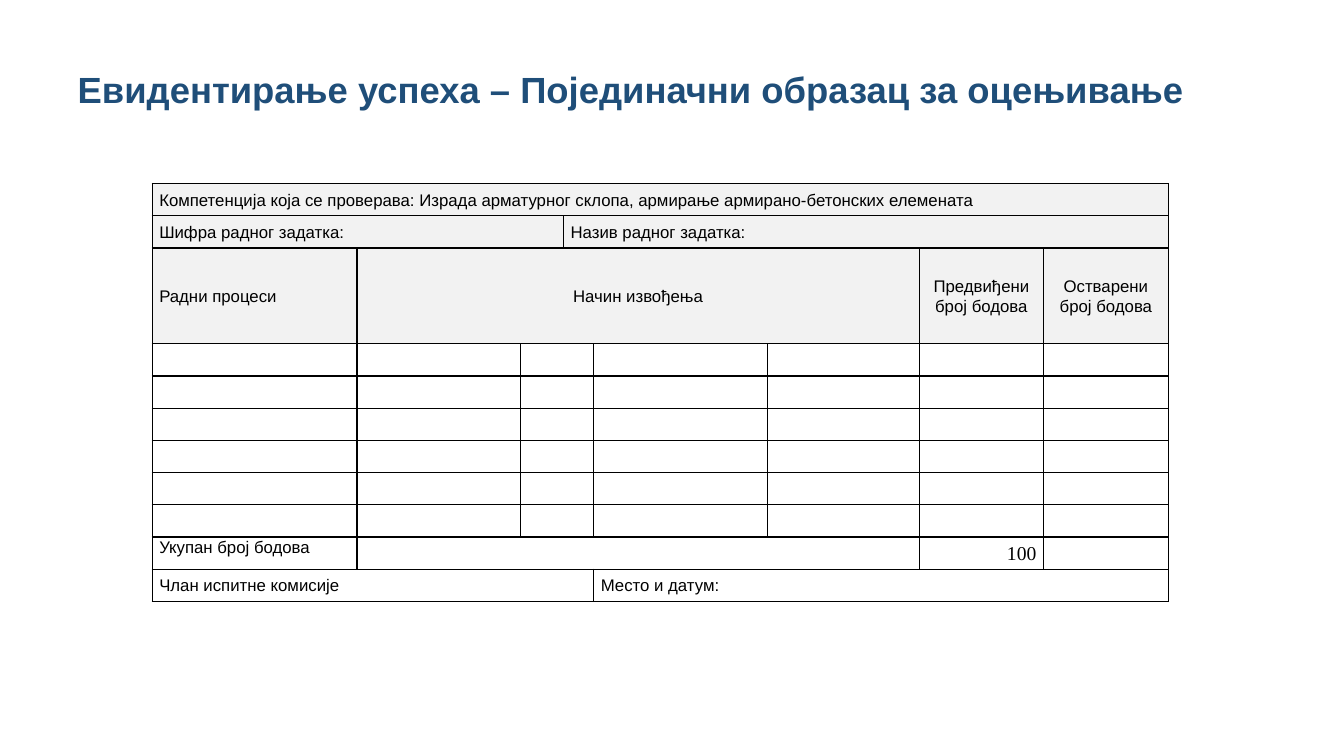
from lxml.etree import SubElement
from pptx import Presentation
from pptx.dml.color import RGBColor
from pptx.enum.text import MSO_ANCHOR as ANC, PP_ALIGN as AL
from pptx.oxml.ns import qn
from pptx.util import Inches, Pt

NAVY = RGBColor(0x1F, 0x4E, 0x79)
BLACK = RGBColor(0, 0, 0)
GREY = RGBColor(0xF2, 0xF2, 0xF2)
WHITE = RGBColor(255, 255, 255)

TITLE = "Евидентирање успеха – Појединачни образац за оцењивање"
COLS = [2.03, 1.62, 0.43, 0.3, 1.72, 1.51, 1.23, 1.24]
ROWS = [0.32] * 2 + [0.95] + [0.32] * 8
BODY = range(3, 9)    # rows left blank for the work processes
HEAD = 3              # number of shaded rows
BOLD = (3, 6)         # rows with a heavy line below
# row, column, columns spanned, text, alignment
CELLS = [
    (0, 0, 8, "Компетенција која се проверава: Израда арматурног склопа, "
              "армирање армирано-бетонских елемената", AL.LEFT),
    (1, 0, 3, "Шифра радног задатка:", AL.LEFT),
    (1, 3, 5, "Назив радног задатка:", AL.LEFT),
    (2, 0, 1, "Радни процеси", AL.LEFT),
    (2, 1, 5, "Начин извођења", AL.CENTER),
    (2, 6, 1, "Предвиђени број бодова", AL.CENTER),
    (2, 7, 1, "Остварени број бодова", AL.CENTER),
    (9, 0, 1, "Укупан број бодова", AL.JUSTIFY),
    (9, 1, 5, "", AL.LEFT),
    (9, 6, 1, "100", AL.RIGHT),
    (10, 0, 4, "Члан испитне комисије", AL.LEFT),
    (10, 4, 4, "Место и датум:", AL.LEFT),
] + [(r, 2, 2, "", AL.LEFT) for r in BODY]


def rule(cell, side, width):
    line = SubElement(cell._tc.get_or_add_tcPr(), qn("a:ln" + side),
                      w=str(Pt(width)))
    fill = SubElement(line, qn("a:solidFill"))
    SubElement(fill, qn("a:srgbClr"), val=str(BLACK))


def style(cell, row, col):
    heavy = {"L": col == 1 and row >= 2 and row < 10,
             "R": col == 0 and row >= 2 and row < 10,
             "T": row - 1 in BOLD, "B": row in BOLD}
    for side, thick in heavy.items():
        rule(cell, side, 1.5 if thick else 1)
    cell.fill.solid()
    cell.fill.fore_color.rgb = GREY if row < HEAD else WHITE
    cell.margin_left = cell.margin_right = Inches(0.07)
    cell.margin_top = cell.margin_bottom = 0
    # Small end mark keeps blank rows low
    SubElement(cell.text_frame.paragraphs[0]._p, qn("a:endParaRPr"), sz="1200")


def paint(run, name, size, color):
    run.font.name, run.font.size = name, Pt(size)
    run.font.color.rgb = color


prs = Presentation()
prs.slide_width, prs.slide_height = Inches(13.33), Inches(7.5)
slide = prs.slides.add_slide(prs.slide_layouts[5])

# Title
title = slide.shapes.title
title.left, title.top = Inches(0.67), Inches(0.35)
title.width, title.height = Inches(11.5), Inches(1.12)
frame = title.text_frame
frame.text = TITLE
frame.vertical_anchor = ANC.MIDDLE
para = frame.paragraphs[0]
para.alignment, para.line_spacing = AL.LEFT, 0.9
paint(para.runs[0], "Arial", 26, NAVY)
para.runs[0].font.bold = True

# Form grid
form = slide.shapes.add_table(len(ROWS), len(COLS), Inches(1.51), Inches(1.82),
                              Inches(sum(COLS)), Inches(sum(ROWS))).table
form.first_row = form.horz_banding = False
for col, width in zip(form.columns, COLS):
    col.width = Inches(width)
for row, height in zip(form.rows, ROWS):
    row.height = Inches(height)
for r in range(len(ROWS)):
    for c in range(len(COLS)):
        style(form.cell(r, c), r, c)

# Form text
for r, c, span, text, align in CELLS:
    cell = form.cell(r, c)
    if span > 1:
        cell.merge(form.cell(r, c + span - 1))
    if not text:
        continue
    cell.text_frame.text = text
    cell.vertical_anchor = ANC.TOP if align == AL.JUSTIFY else ANC.MIDDLE
    para = cell.text_frame.paragraphs[0]
    para.alignment, para.line_spacing = align, 1.07
    if r > BODY[-1]:
        para.space_after = Pt(6)
    font = ("Times New Roman", 14) if align == AL.RIGHT else ("Arial", 12)
    paint(para.runs[0], *font, BLACK)

prs.save("out.pptx")
